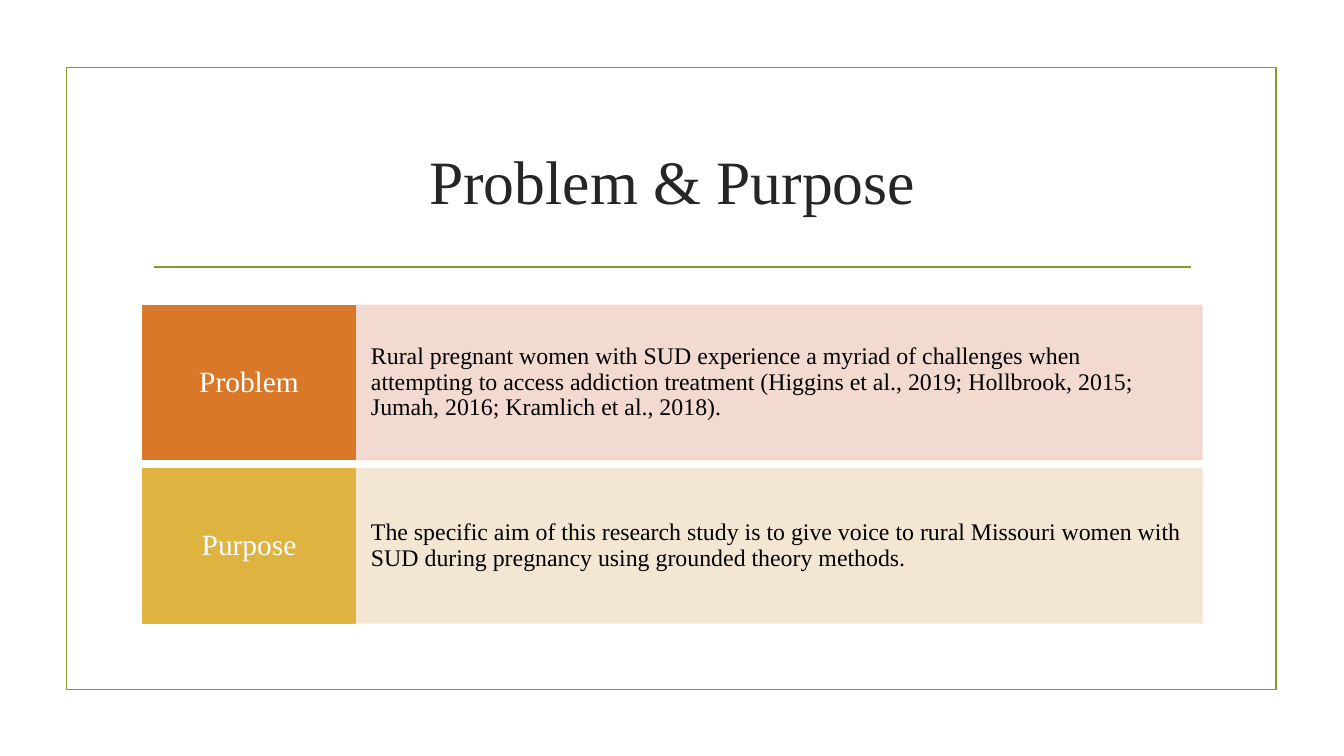
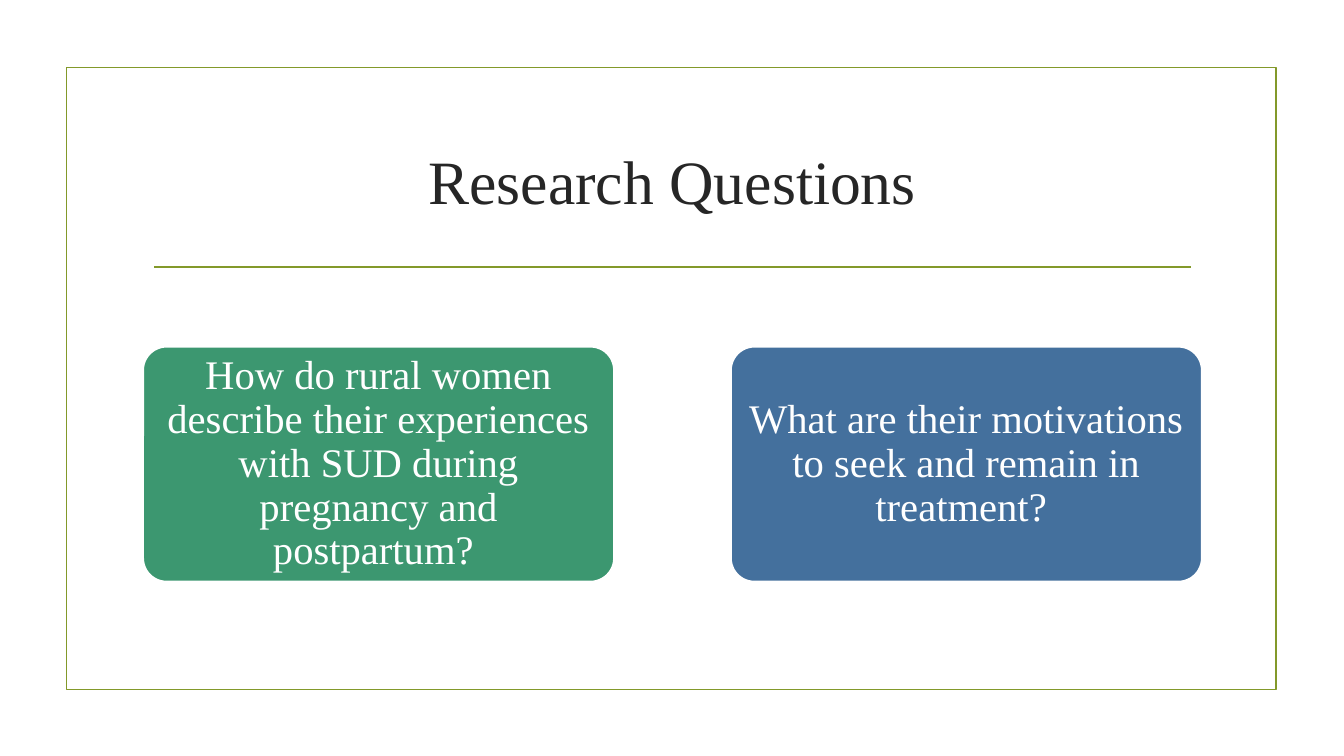
"""Build two framed slides: problem and purpose, then research questions."""
from lxml.etree import SubElement
from pptx import Presentation
from pptx.dml.color import RGBColor
from pptx.enum.shapes import MSO_CONNECTOR, MSO_SHAPE
from pptx.enum.text import MSO_ANCHOR, PP_ALIGN
from pptx.oxml.ns import qn
from pptx.util import Inches, Pt

COLORS = {
    "olive": "83992A", "title": "262626", "white": "FFFFFF", "black": "000000",
    "orange": "D97828", "blush": "F1D6CD", "gold": "DEB340", "sand": "F2E4CF",
    "green": "3C9770", "blue": "44709D",
}
FONT = "Times New Roman"
LINE_WIDTH = 1.25
LEFT, WIDTH = 1.42, 10.5

STATEMENTS = [
    ("Problem", "orange", "blush",
     "Rural pregnant women with SUD experience a myriad of challenges when "
     "attempting to access addiction treatment (Higgins et al., 2019; "
     "Hollbrook, 2015; Jumah, 2016; Kramlich et al., 2018)."),
    ("Purpose", "gold", "sand",
     "The specific aim of this research study is to give voice to rural "
     "Missouri women with SUD during pregnancy using grounded theory methods."),
]
QUESTIONS = [
    ("green", "How do rural women describe their experiences with SUD during "
              "pregnancy and postpartum? "),
    ("blue", "What are their motivations to seek and remain in treatment? "),
]


def rgb(name):
    return RGBColor.from_string(COLORS[name])


def write(shape, text, size, color, align=PP_ALIGN.CENTER, insets=(0.1, 0.05), spacing=0.9):
    frame = shape.text_frame
    frame.word_wrap = True
    frame.vertical_anchor = MSO_ANCHOR.MIDDLE
    frame.margin_left = frame.margin_right = Inches(insets[0])
    frame.margin_top = frame.margin_bottom = Inches(insets[1])
    paragraph = frame.paragraphs[0]
    paragraph.text = text
    paragraph.alignment = align
    paragraph.line_spacing = spacing
    paragraph.font.name = FONT
    paragraph.font.size = Pt(size)
    paragraph.font.color.rgb = rgb(color)


def add_block(page, kind, place, fill, line, opacity=None):
    block = page.shapes.add_shape(kind, *map(Inches, place))
    block.shadow.inherit = False
    if fill:
        block.fill.solid()
        block.fill.fore_color.rgb = rgb(fill)
    else:
        block.fill.background()
    block.line.color.rgb = rgb(line)
    block.line.width = Pt(LINE_WIDTH)
    if opacity:
        for color in block._element.spPr.iter(qn("a:srgbClr")):
            SubElement(color, qn("a:alpha"), val=str(opacity * 1000))
    return block


def add_page(deck, title):
    page = deck.slides.add_slide(deck.slide_layouts[6])
    add_block(page, MSO_SHAPE.RECTANGLE, (0.66, 0.67, 12, 6.17), None, "olive")
    rule = page.shapes.add_connector(
        MSO_CONNECTOR.STRAIGHT, *map(Inches, (1.53, 2.65, 11.81, 2.65)))
    rule.line.color.rgb = rgb("olive")
    rule.line.width = Pt(LINE_WIDTH)
    SubElement(rule._element.spPr, qn("a:effectLst"))
    box = page.shapes.add_textbox(*map(Inches, (LEFT, 1.07, WIDTH, 1.43)))
    write(box, title, 44, "title", spacing=1)
    return page


def add_statements(page):
    top, height, pitch = 3.03, 1.53, 1.62
    label_width = WIDTH / 5
    for row, (label, strong, pale, text) in enumerate(STATEMENTS):
        y = top + row * pitch
        body = add_block(page, MSO_SHAPE.RECTANGLE,
                         (LEFT + label_width, y, WIDTH - label_width, height),
                         pale, pale, opacity=90)
        write(body, text, 17, "black", PP_ALIGN.LEFT, (0.16, 0.39))
        tag = add_block(page, MSO_SHAPE.RECTANGLE,
                        (LEFT, y, label_width, height), strong, strong)
        write(tag, label, 21, "white", insets=(0.11, 0.15))


def add_questions(page):
    top, width, height = 3.44, 4.67, 2.33
    pitch = WIDTH - width
    for column, (color, text) in enumerate(QUESTIONS):
        card = add_block(page, MSO_SHAPE.ROUNDED_RECTANGLE,
                         (LEFT + column * pitch, top, width, height), color, "white")
        card.adjustments[0] = 0.1
        write(card, text, 29, "white", insets=(0.06, 0.04))


def main():
    deck = Presentation()
    deck.slide_width, deck.slide_height = Inches(13.33), Inches(7.5)
    add_statements(add_page(deck, "Problem & Purpose"))
    add_questions(add_page(deck, "Research Questions"))
    deck.save("out.pptx")


if __name__ == "__main__":
    main()
